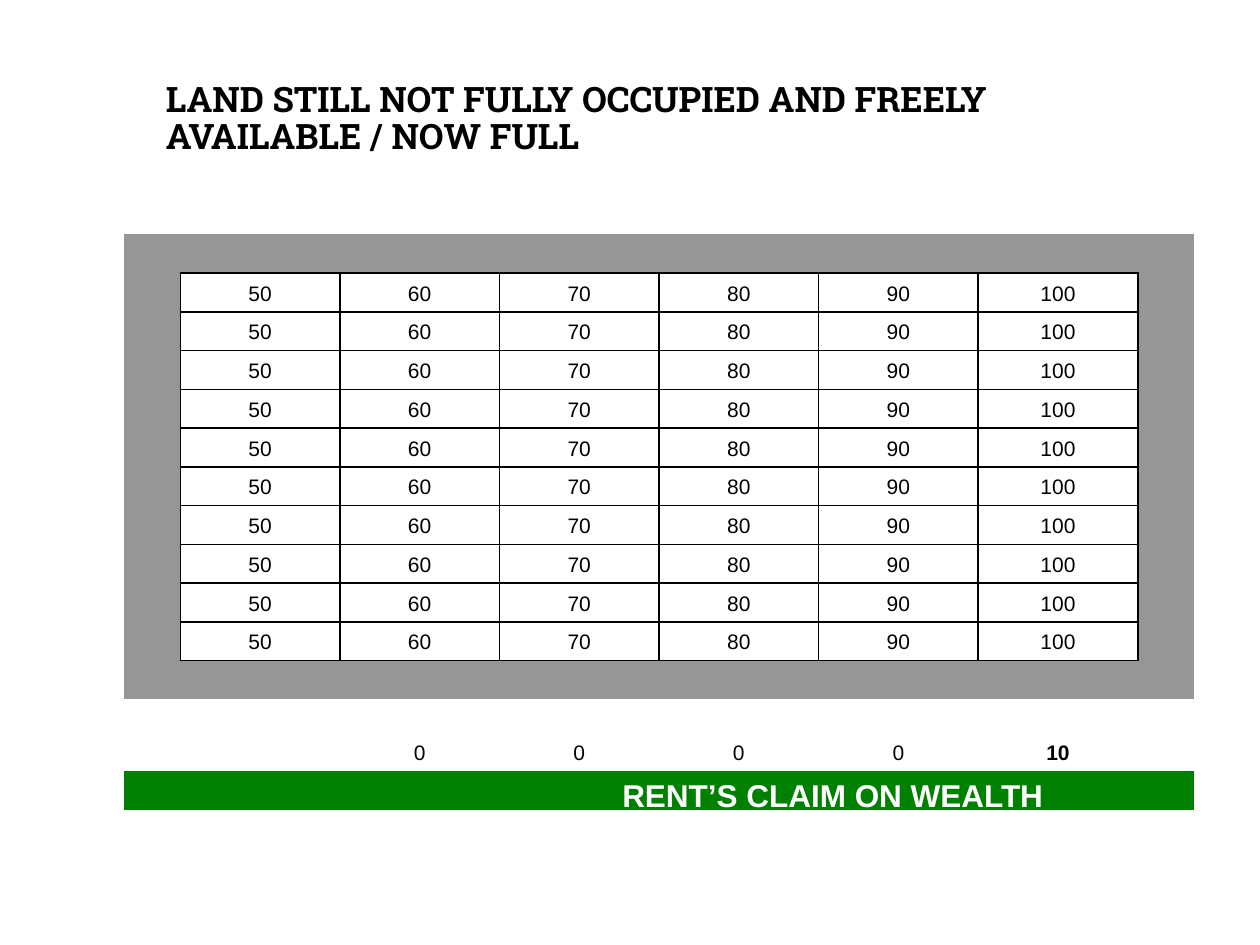
"""Build a slide with a grid of land yields and a bar for rent's claim on wealth."""
import dataclasses

import lxml.etree
import pptx
import pptx.dml.color
import pptx.enum.text
import pptx.oxml.ns
import pptx.util

Pt = pptx.util.Pt
Color = pptx.dml.color.RGBColor.from_string
qn = pptx.oxml.ns.qn
enum = pptx.enum.text


@dataclasses.dataclass
class Theme:
    ink: str = "000000"
    paper: str = "FFFFFF"
    margin: str = "969696"
    rent: str = "008000"
    body: str = "Arial"
    head: str = "Roboto Slab"
    small: int = 12
    label: int = 18
    title: int = 20


theme = Theme()


def style(font, name, size, color, bold):
    for key, value in {"name": name, "size": Pt(size), "bold": bold}.items():
        setattr(font, key, value)
    font.color.rgb = Color(color)


def edge(cell, side, ruled):
    line = lxml.etree.SubElement(cell._tc.get_or_add_tcPr(), qn(f"a:ln{side}"))
    if ruled:
        line.set("w", str(Pt(1)))
        fill = lxml.etree.SubElement(line, qn("a:solidFill"))
        lxml.etree.SubElement(fill, qn("a:srgbClr"), val=theme.ink)
    else:
        line.set("w", "0")
        lxml.etree.SubElement(line, qn("a:noFill"))


deck = pptx.Presentation()
deck.slide_width, deck.slide_height = Pt(720), Pt(540)
slide = deck.slides.add_slide(deck.slide_layouts[6])

yields = ["", "50", "60", "70", "80", "90", "100", ""]
blank = [""] * len(yields)
rents = ["", "", "0", "0", "0", "0", "10", ""]
rows = [blank] + [yields] * 10 + [blank, rents, blank]
fills = [theme.margin] * 12 + [None, theme.rent]
widths = [32.4] + [91.2] * 6 + [32.4]
heights = [22.15] * 12 + [41.1, 22.15]

frame = slide.shapes.add_table(
    len(rows), len(widths), Pt(70.6), Pt(133.9), Pt(sum(widths)), Pt(sum(heights))
)
table = frame.table
table.first_row = table.horz_banding = False
for col, width in zip(table.columns, widths):
    col.width = Pt(width)
for row, height in zip(table.rows, heights):
    row.height = Pt(height)

land = {(r, c) for r in range(1, 11) for c in range(1, 7)}
sides = {"L": (0, -1), "R": (0, 1), "T": (-1, 0), "B": (1, 0)}
for r, texts in enumerate(rows):
    for c, text in enumerate(texts):
        cell = table.cell(r, c)
        for side, (down, over) in sides.items():
            edge(cell, side, bool({(r, c), (r + down, c + over)} & land))
        color = None if (r, c) in land else fills[r]
        if color:
            cell.fill.solid()
            cell.fill.fore_color.rgb = Color(color)
        else:
            cell.fill.background()
        cell.vertical_anchor = enum.MSO_ANCHOR.BOTTOM
        para = cell.text_frame.paragraphs[0]
        para.alignment = enum.PP_ALIGN.CENTER
        if text:
            run = para.add_run()
            run.text = text
            style(run.font, theme.body, theme.small, theme.ink, text == "10")
        else:
            lxml.etree.SubElement(para._p, qn("a:endParaRPr"), sz=str(theme.small * 100))

labels = [
    ("RENT’S CLAIM ON WEALTH", (348.5, 439.9, 289.4, 28.8),
     theme.body, theme.label, theme.paper, 1.0),
    ("LAND STILL NOT FULLY OCCUPIED AND FREELY AVAILABLE / NOW FULL",
     (87.8, 43.2, 578.2, 55.4), theme.head, theme.title, theme.ink, 0.9),
]
for text, place, name, size, color, pitch in labels:
    box = slide.shapes.add_textbox(*map(Pt, place)).text_frame
    box.word_wrap = True
    para = box.paragraphs[0]
    para.line_spacing = pitch
    run = para.add_run()
    run.text = text
    style(run.font, name, size, color, True)

deck.save("out.pptx")
